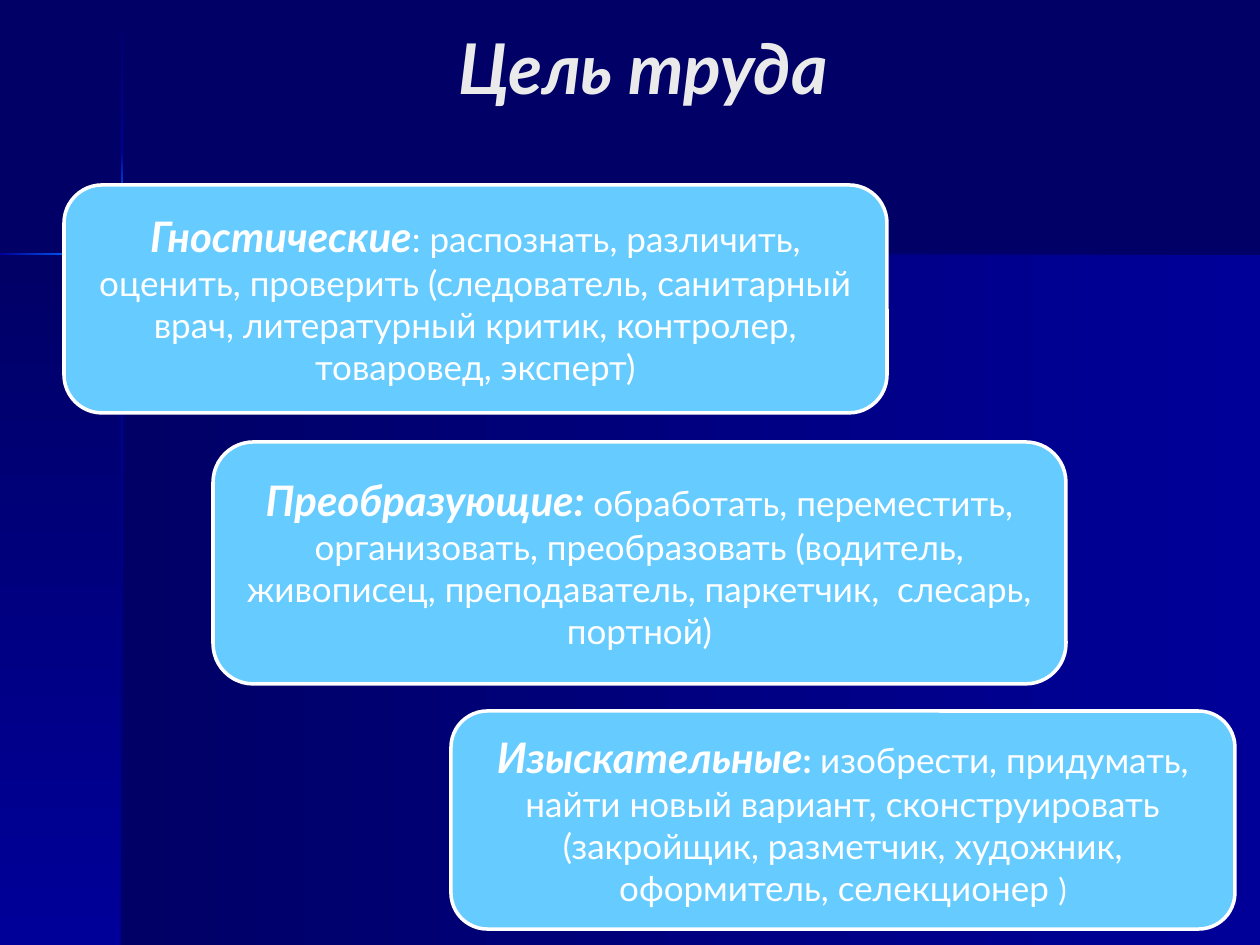
from dataclasses import dataclass

from pptx import Presentation
from pptx.dml.color import RGBColor
from pptx.enum.shapes import MSO_SHAPE
from pptx.enum.text import MSO_ANCHOR, PP_ALIGN
from pptx.util import Emu, Pt

RECTANGLE = MSO_SHAPE.RECTANGLE
ROUNDED = MSO_SHAPE.ROUNDED_RECTANGLE
MIDDLE = MSO_ANCHOR.MIDDLE
CENTER = PP_ALIGN.CENTER

PX_PER_INCH = 126
FONT = "Lato"
COLORS = {
    "navy": "000066",
    "blue": "000099",
    "glow": "0066FF",
    "card": "66CCFF",
    "white": "FFFFFF",
    "title": "EAEAEA",
}


@dataclass(frozen=True)
class Box:
    left: int
    top: int
    width: int
    height: int


@dataclass(frozen=True)
class Band:
    box: Box
    start: str
    end: str
    vertical: bool


@dataclass(frozen=True)
class Piece:
    text: str
    size: int = 20
    bold: bool = False
    italic: bool = False
    color: str = "white"


@dataclass(frozen=True)
class Card:
    box: Box
    pieces: tuple[Piece, ...]


def px(value: int) -> Emu:
    return Emu(round(value * 914400 / PX_PER_INCH))


def rgb(name: str) -> RGBColor:
    return RGBColor.from_string(COLORS[name])


def place(box: Box) -> tuple[Emu, ...]:
    return px(box.left), px(box.top), px(box.width), px(box.height)


def heading(text: str) -> Piece:
    return Piece(text, size=24, bold=True, italic=True)


def write(shape, pieces: tuple[Piece, ...]) -> None:
    frame = shape.text_frame
    frame.word_wrap = True
    frame.vertical_anchor = MIDDLE
    paragraph = frame.paragraphs[0]
    paragraph.alignment = CENTER
    for piece in pieces:
        run = paragraph.add_run()
        run.text = piece.text
        font = run.font
        font.name, font.size = FONT, Pt(piece.size)
        font.bold, font.italic = piece.bold, piece.italic
        font.color.rgb = rgb(piece.color)


def draw_band(slide, band: Band) -> None:
    shape = slide.shapes.add_shape(RECTANGLE, *place(band.box))
    shape.shadow.inherit = False
    shape.line.fill.background()
    shape.fill.gradient()
    shape.fill.gradient_angle = 270 if band.vertical else 0
    for stop, color in zip(shape.fill.gradient_stops, (band.start, band.end)):
        stop.color.rgb = rgb(color)


def draw_card(slide, card: Card) -> None:
    shape = slide.shapes.add_shape(ROUNDED, *place(card.box))
    shape.shadow.inherit = False
    shape.fill.solid()
    shape.fill.fore_color.rgb = rgb("card")
    shape.line.color.rgb = rgb("white")
    shape.line.width = Pt(2)
    write(shape, card.pieces)


def draw_title(slide, box: Box, piece: Piece) -> None:
    title = slide.shapes.title
    title.left, title.top, title.width, title.height = place(box)
    write(title, (piece,))
    # Bring the title in front of the background bands
    title.element.getparent().append(title.element)


# Background panels, then the thin lines along their edges
BANDS = (
    Band(Box(122, 255, 1138, 690), "navy", "blue", False),
    Band(Box(0, 255, 122, 690), "navy", "blue", True),
    Band(Box(121, 1, 2, 151), "navy", "blue", True),
    Band(Box(121, 355, 2, 590), "blue", "navy", True),
    Band(Box(223, 253, 1037, 2), "blue", "navy", False),
    Band(Box(121, 152, 2, 56), "blue", "glow", True),
    Band(Box(0, 253, 77, 2), "blue", "glow", False),
)

CARDS = (
    Card(Box(64, 185, 823, 228), (
        heading("Гностические"),
        Piece(": распознать, различить, оценить, проверить (следователь, "
              "санитарный врач, литературный критик, контролер, товаровед, эксперт)"),
    )),
    Card(Box(213, 442, 853, 242), (
        heading("Преобразующие:"),
        Piece(" ", bold=True),
        Piece("обработать, переместить, организовать, преобразовать (водитель, "
              "живописец, преподаватель, паркетчик,  слесарь, портной)"),
    )),
    Card(Box(451, 711, 784, 218), (
        heading("Изыскательные"),
        Piece(": ", bold=True),
        Piece("изобрести, придумать, найти новый вариант, сконструировать "
              "(закройщик, разметчик, художник, оформитель, селекционер "),
        Piece(")", size=18),
    )),
)


def main() -> None:
    presentation = Presentation()
    presentation.slide_width = px(1260)
    presentation.slide_height = px(945)
    slide = presentation.slides.add_slide(presentation.slide_layouts.get_by_name("Title Only"))
    slide.background.fill.solid()
    slide.background.fill.fore_color.rgb = rgb("navy")

    for band in BANDS:
        draw_band(slide, band)
    draw_title(slide, Box(123, 0, 1040, 132),
               Piece("Цель труда", size=40, bold=True, italic=True, color="title"))
    for card in CARDS:
        draw_card(slide, card)

    presentation.save("out.pptx")


if __name__ == "__main__":
    main()
